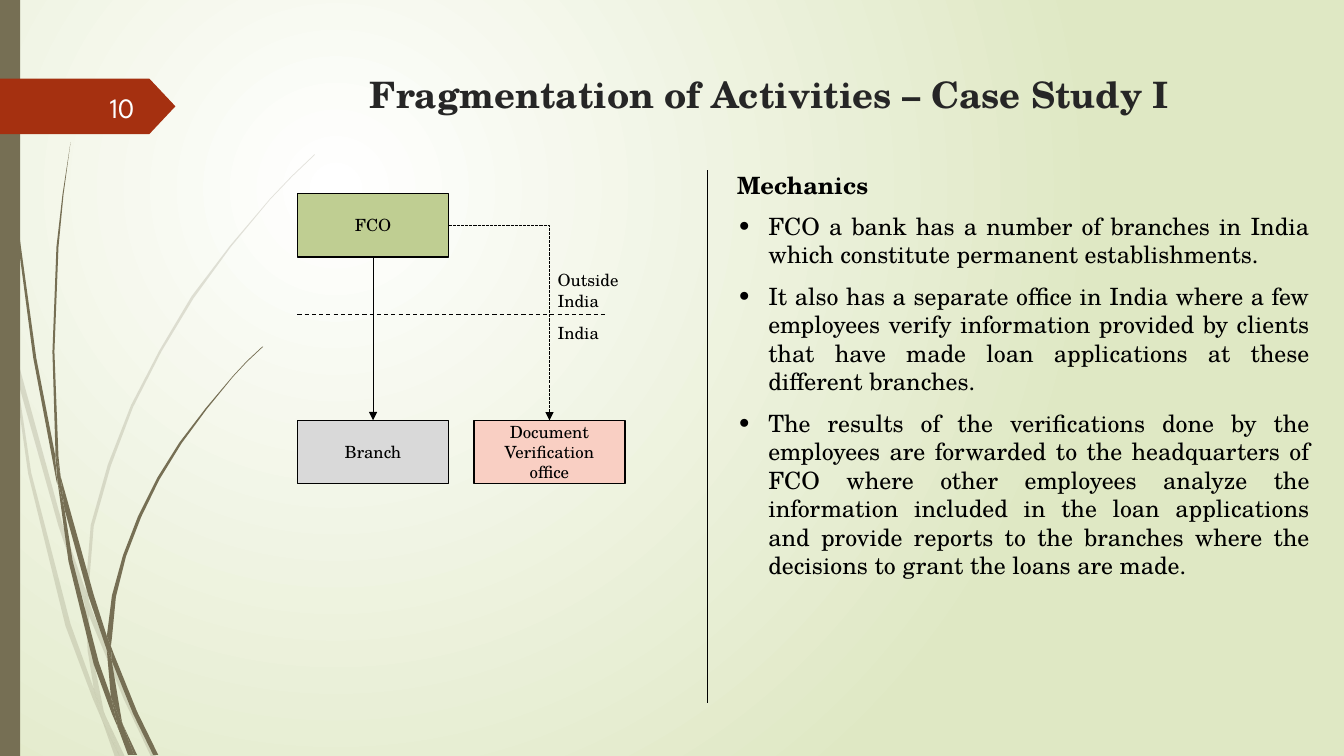
from lxml.etree import SubElement
from pptx import Presentation
from pptx.dml.color import RGBColor
from pptx.enum.dml import MSO_LINE
from pptx.enum.shapes import MSO_CONNECTOR, MSO_SHAPE
from pptx.enum.text import MSO_ANCHOR, PP_ALIGN
from pptx.oxml.ns import qn
from pptx.util import Inches, Pt

OLIVE, BLACK = "766F54", "000000"

# Outlines of the grass blades, in hundredths of an inch
FAINT_BLADES = [
    [(11, 350), (9, 322), (0, 282), (0, 299), (10, 344)],
    [(58, 522), (84, 599), (85, 586), (62, 520), (14, 345), (17, 376)],
    [(92, 607), (88, 596), (88, 610), (123, 694), (150, 751), (155, 751), (127, 692)],
    [(119, 751), (124, 751), (105, 711)],
    [(93, 683), (70, 619), (31, 469), (17, 376), (11, 350), (28, 470), (65, 621),
     (92, 693), (101, 714), (99, 707)],
    [(84, 599), (87, 646), (93, 683), (96, 692), (105, 711), (103, 706), (91, 646),
     (88, 610), (88, 608)],
    [(88, 584), (93, 522), (110, 462), (132, 404), (160, 349), (192, 296), (229, 245),
     (268, 198), (290, 175), (312, 154), (312, 153), (289, 175), (268, 197), (228, 244),
     (190, 294), (158, 348), (130, 402), (107, 461), (90, 521), (85, 584), (85, 586),
     (88, 596)],
    [(101, 714), (114, 751), (119, 751)],
    [(88, 608), (88, 610), (88, 596), (85, 586), (84, 599)],
    [(96, 692), (93, 683), (99, 707), (101, 714), (119, 751), (105, 711)],
]
DARK_BLADES = [
    [(7, 110), (17, 233), (33, 355), (56, 477), (57, 481), (55, 457), (55, 453),
     (36, 355), (19, 232), (8, 109), (5, 48), (4, 0), (3, 0), (4, 48)],
    [(88, 592), (106, 645), (106, 631), (93, 590), (60, 472), (64, 505)],
    [(113, 649), (110, 641), (111, 656), (132, 708), (152, 749), (157, 749), (136, 706)],
    [(110, 691), (98, 657), (72, 556), (64, 505), (57, 477), (68, 557), (93, 659),
     (111, 708), (117, 722), (116, 717)],
    [(60, 472), (58, 453), (54, 349), (58, 245), (63, 193), (70, 141), (62, 193),
     (56, 245), (52, 349), (55, 449)],
    [(133, 749), (136, 749), (122, 719)],
    [(57, 477), (64, 505), (60, 472), (55, 449), (55, 453)],
    [(111, 633), (115, 592), (125, 552), (140, 513), (158, 476), (180, 440), (205, 406),
     (231, 374), (245, 359), (261, 344), (260, 344), (245, 358), (231, 373), (204, 405),
     (178, 439), (156, 474), (137, 512), (122, 551), (111, 591), (106, 631), (110, 641)],
    [(117, 722), (127, 749), (131, 749)],
    [(106, 645), (110, 691), (116, 706), (122, 719), (121, 716), (111, 656), (109, 651)],
    [(106, 645), (109, 651), (111, 656), (110, 641), (106, 631)],
    [(116, 706), (110, 691), (116, 717), (117, 722), (130, 749), (133, 749), (122, 719)],
]
MECHANICS = [
    "FCO a bank has a number of branches in India which constitute permanent establishments.",
    "It also has a separate office in India where a few employees verify information provided "
    "by clients that have made loan applications at these different branches.",
    "The results of the verifications done by the employees are forwarded to the headquarters "
    "of FCO where other employees analyze the information included in the loan applications "
    "and provide reports to the branches where the decisions to grant the loans are made.",
]


def color(value):
    return RGBColor.from_string(value)


class SlideBuilder:
    font = "TeX Gyre Schola"

    def __init__(self, slide):
        self.slide = slide
        self.shapes = slide.shapes

    def background(self, inner, outer):
        fill = self.slide.background.fill
        fill.gradient()
        for stop, position, value in zip(fill.gradient_stops, (0, 1), (inner, outer)):
            stop.position = position
            stop.color.rgb = color(value)
        gradient = self.slide._element.find(".//" + qn("a:gradFill"))
        gradient.remove(gradient.find(qn("a:lin")))
        circle = SubElement(gradient, qn("a:path"), {"path": "circle"})
        SubElement(circle, qn("a:fillToRect"), l="50000", t="50000", r="100000", b="100000")

    def paint(self, shape, fill, line=None):
        shape.shadow.inherit = False
        shape.fill.solid()
        shape.fill.fore_color.rgb = color(fill)
        if line:
            shape.line.color.rgb = color(line)
            shape.line.width = Pt(1)
        else:
            shape.line.fill.background()

    def blade(self, outline, alpha=None):
        builder = self.shapes.build_freeform(*outline[0], scale=Inches(.01))
        builder.add_line_segments(outline[1:], close=True)
        shape = builder.convert_to_shape()
        self.paint(shape, OLIVE)
        if alpha:
            fill_color = shape._element.spPr.find(".//" + qn("a:srgbClr"))
            SubElement(fill_color, qn("a:alpha"), val=str(alpha * 1000))

    def block(self, kind, left, top, width, height, fill, line=None):
        shape = self.shapes.add_shape(kind, *map(Inches, (left, top, width, height)))
        self.paint(shape, fill, line)
        return shape

    def style(self, para, size, align=PP_ALIGN.LEFT, value=BLACK, bold=False, font=None):
        para.alignment = align
        para.font.name = font or self.font
        para.font.size = Pt(size)
        para.font.bold = bold
        para.font.color.rgb = color(value)

    def node(self, text, left, top, fill):
        box = self.block(MSO_SHAPE.RECTANGLE, left, top, 1.5, .63, fill, BLACK)
        box.text_frame.text = text
        box.text_frame.word_wrap = True
        box.text_frame.vertical_anchor = MSO_ANCHOR.MIDDLE
        self.style(box.text_frame.paragraphs[0], 12, PP_ALIGN.CENTER)
        return box

    def title(self, text):
        title = self.shapes.title
        title.left, title.top = Inches(2.76), Inches(.67)
        title.width, title.height = Inches(9.75), Inches(1.4)
        title.text_frame.text = text
        title.text_frame.vertical_anchor = MSO_ANCHOR.TOP
        self.style(title.text_frame.paragraphs[0], 26, PP_ALIGN.CENTER, "262626", True)

    def text(self, lines, left, top, width, height, margin=0):
        box = self.shapes.add_textbox(*map(Inches, (left, top, width, height)))
        frame = box.text_frame
        frame.text = "\n".join(lines)
        frame.word_wrap = True
        frame.margin_left = frame.margin_right = Inches(margin)
        frame.margin_top = frame.margin_bottom = Inches(margin / 2)
        for para in frame.paragraphs:
            para.space_after = Pt(9)
        return frame

    def bullet(self, para):
        properties = para._p.get_or_add_pPr()
        properties.set("marL", str(Inches(.31)))
        properties.set("indent", str(-Inches(.31)))
        bullet_font = SubElement(properties, qn("a:buFont"), typeface=self.font)
        bullet_font.addnext(SubElement(properties, qn("a:buChar"), char="•"))

    def line(self, start, end, dash=None, arrow=False, kind=MSO_CONNECTOR.STRAIGHT):
        line = self.shapes.add_connector(kind, *map(Inches, (*start, *end)))
        line.line.color.rgb = color(BLACK)
        line.line.width = Pt(.75)
        if dash:
            line.line.dash_style = dash
        if arrow:
            SubElement(line.line._get_or_add_ln(), qn("a:tailEnd"), type="triangle")
        SubElement(line._element.spPr, qn("a:effectLst"))
        return line


def main():
    deck = Presentation()
    deck.slide_width, deck.slide_height = Inches(13.33), Inches(7.5)
    page = SlideBuilder(deck.slides.add_slide(deck.slide_layouts[5]))

    # Backdrop
    page.background("FFFFFF", "DFE8C4")
    for outline in FAINT_BLADES:
        page.blade(outline, alpha=20)
    for outline in DARK_BLADES:
        page.blade(outline)
    page.block(MSO_SHAPE.RECTANGLE, 0, 0, .2, 7.5, OLIVE)

    # Page number and title
    tag = page.block(MSO_SHAPE.PENTAGON, 0, .78, 1.74, .55, "A53010")
    tag.adjustments[0] = .47
    number = page.text(["10"], .58, .86, .85, .4, margin=.1)
    number.vertical_anchor = MSO_ANCHOR.MIDDLE
    number.paragraphs[0].space_after = Pt(0)
    page.style(number.paragraphs[0], 20, PP_ALIGN.RIGHT, "FEFFFF", font="League Spartan")
    page.title("Fragmentation of Activities – Case Study I")

    # Mechanics
    page.line((7.02, 1.69), (7.02, 6.97))
    heading, *points = page.text(["Mechanics", *MECHANICS], 7.31, 1.69, 5.68, 5.54).paragraphs
    page.style(heading, 17, bold=True)
    for para in points:
        page.style(para, 17, PP_ALIGN.JUSTIFY)
        page.bullet(para)

    # Structure diagram
    company = page.node("FCO", 2.95, 1.92, "BFCE92")
    office = page.node("Document Verification office", 4.7, 4.17, "F9CFC3")
    branch = page.node("Branch", 2.95, 4.17, "D9D9D9")
    ownership = page.line((3.7, 2.55), (3.7, 4.17), arrow=True)
    ownership.begin_connect(company, 2)
    ownership.end_connect(branch, 0)
    page.line((2.95, 3.12), (6.03, 3.12), MSO_LINE.DASH)
    for para in page.text(["Outside India", "India"], 5.53, 2.68, .92, .51).paragraphs:
        page.style(para, 12)
    control = page.line((4.45, 2.23), (5.45, 4.17), MSO_LINE.SQUARE_DOT, True,
                        MSO_CONNECTOR.ELBOW)
    control._element.spPr.find(qn("a:prstGeom")).set("prst", "bentConnector2")
    control.begin_connect(company, 3)
    control.end_connect(office, 0)

    deck.save("out.pptx")


if __name__ == "__main__":
    main()
